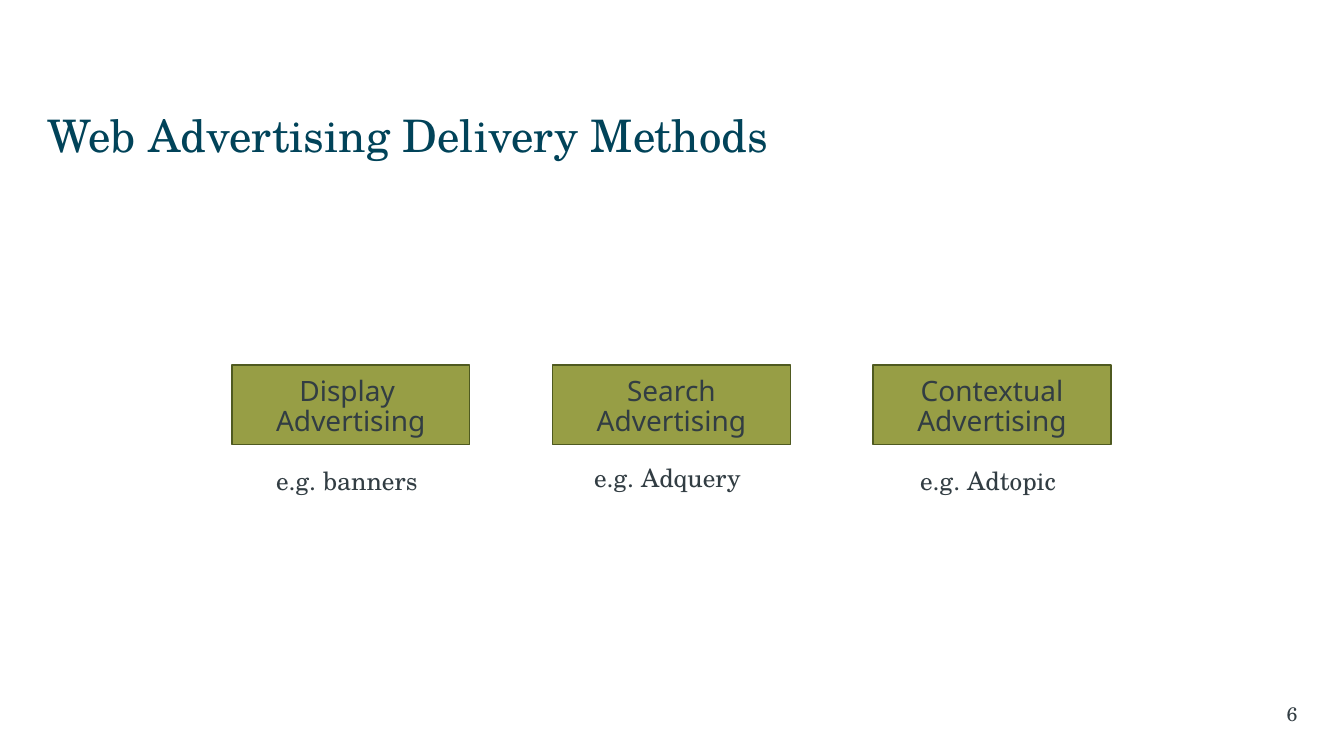
"""Build a slide on the three delivery methods of web advertising."""
from dataclasses import dataclass

from pptx import Presentation
from pptx.dml.color import RGBColor
from pptx.enum.shapes import MSO_SHAPE
from pptx.enum.text import MSO_ANCHOR, PP_ALIGN
from pptx.util import Inches, Pt

TITLE = "Web Advertising Delivery Methods"
PAGE = "6"
METHODS = [
    (("Display ", "Advertising"), "e.g. banners", 4.57),
    (("Search", "Advertising"), "e.g. Adquery", 4.54),
    (("Contextual", "Advertising"), "e.g. Adtopic", 4.57),
]


@dataclass(frozen=True)
class Theme:
    """Colours, fonts and type sizes."""
    title: str = "014359"
    text: str = "323D43"
    fill: str = "979E45"
    line: str = "4F5A20"
    serif: str = "TeX Gyre Schola"
    sans: str = "Noto Sans"
    title_size: int = 32
    label_size: int = 20
    caption_size: int = 18
    page_size: int = 14


T = Theme()
GRID_LEFT, GRID_STEP = 2.3, 3.18
BOX_TOP, BOX_W, BOX_H = 3.62, 2.36, 0.79
CAPTION_W, CAPTION_H, CAPTION_SHIFT = 2.76, 0.4, -0.24


def write(sp, *lines, size, font=T.serif, color=T.text, align=PP_ALIGN.CENTER,
          anchor=MSO_ANCHOR.TOP, insets=(0.1, 0.05, 0.1, 0.05), wrap=True, spacing=1.0):
    """Fill a shape with formatted lines of text."""
    tf = sp.text_frame
    tf.word_wrap, tf.vertical_anchor = wrap, anchor
    tf.margin_left, tf.margin_top, tf.margin_right, tf.margin_bottom = map(Inches, insets)
    for i, line in enumerate(lines):
        p = tf.add_paragraph() if i else tf.paragraphs[0]
        p.alignment, p.line_spacing = align, spacing
        r = p.add_run()
        r.text = line
        r.font.name, r.font.size = font, Pt(size)
        r.font.color.rgb = RGBColor.from_string(color)


def add_method(s, left, label, caption, caption_top):
    """Add one method box with its example below."""
    sp = s.shapes.add_shape(MSO_SHAPE.RECTANGLE, *map(Inches, (left, BOX_TOP, BOX_W, BOX_H)))
    sp.shadow.inherit = False
    sp.fill.solid()
    sp.fill.fore_color.rgb = RGBColor.from_string(T.fill)
    sp.line.color.rgb = RGBColor.from_string(T.line)
    sp.line.width = Pt(1)
    write(sp, *label, size=T.label_size, font=T.sans, anchor=MSO_ANCHOR.MIDDLE,
          insets=(0.1, 0.05, 0.1, 0), wrap=False, spacing=0.9)
    box = (left + CAPTION_SHIFT, caption_top, CAPTION_W, CAPTION_H)
    write(s.shapes.add_textbox(*map(Inches, box)), caption, size=T.caption_size)


def main():
    prs = Presentation()
    prs.slide_width, prs.slide_height = Inches(13.33), Inches(7.5)
    s = prs.slides.add_slide(prs.slide_layouts[5])
    title = s.shapes.title
    title.left, title.top, title.width, title.height = map(Inches, (0.47, 0.98, 12.39, 0.71))
    write(title, TITLE, size=T.title_size, color=T.title, align=PP_ALIGN.LEFT,
          anchor=MSO_ANCHOR.MIDDLE, insets=(0, 0.05, 0.1, 0.05))
    page = s.shapes.add_textbox(*map(Inches, (10.31, 6.91, 2.56, 0.34)))
    write(page, PAGE, size=T.page_size, align=PP_ALIGN.RIGHT, insets=(0.1, 0.05, 0, 0.05))
    for i, method in enumerate(METHODS):
        add_method(s, GRID_LEFT + i * GRID_STEP, *method)
    prs.save("out.pptx")


if __name__ == "__main__":
    main()
